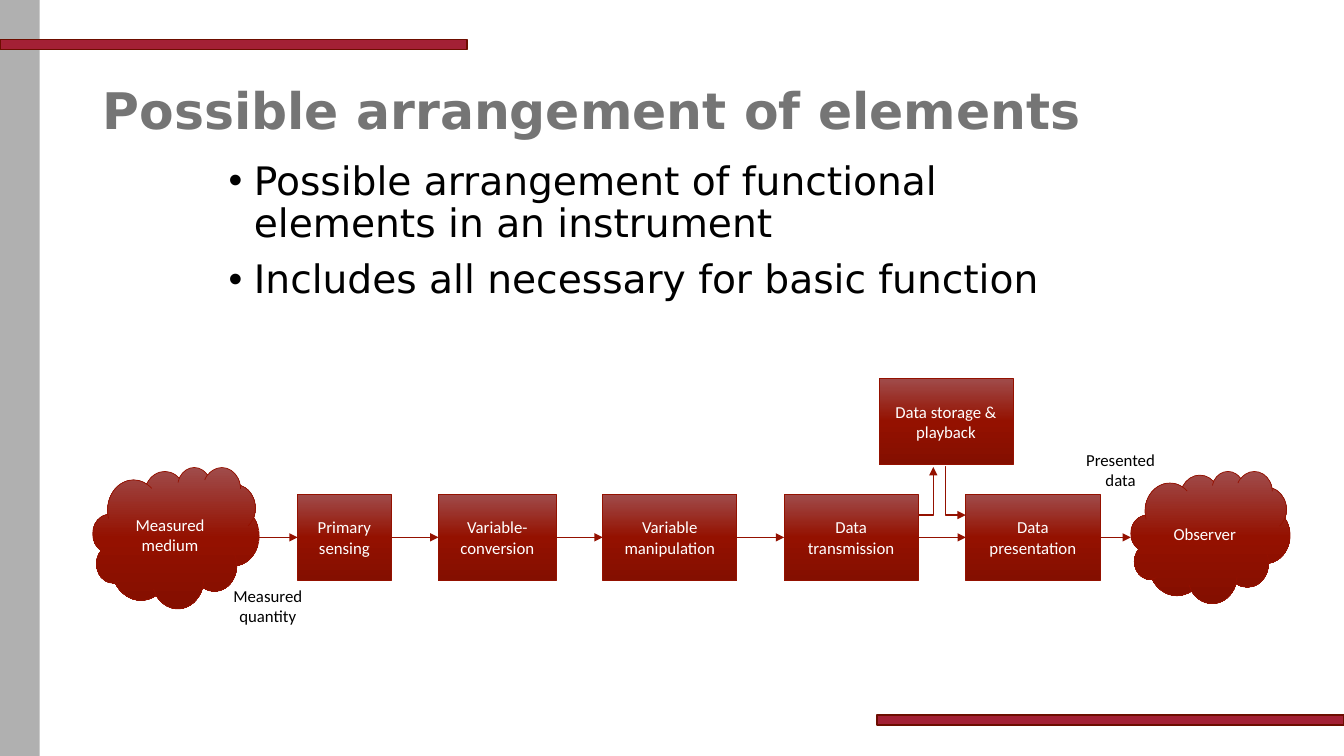
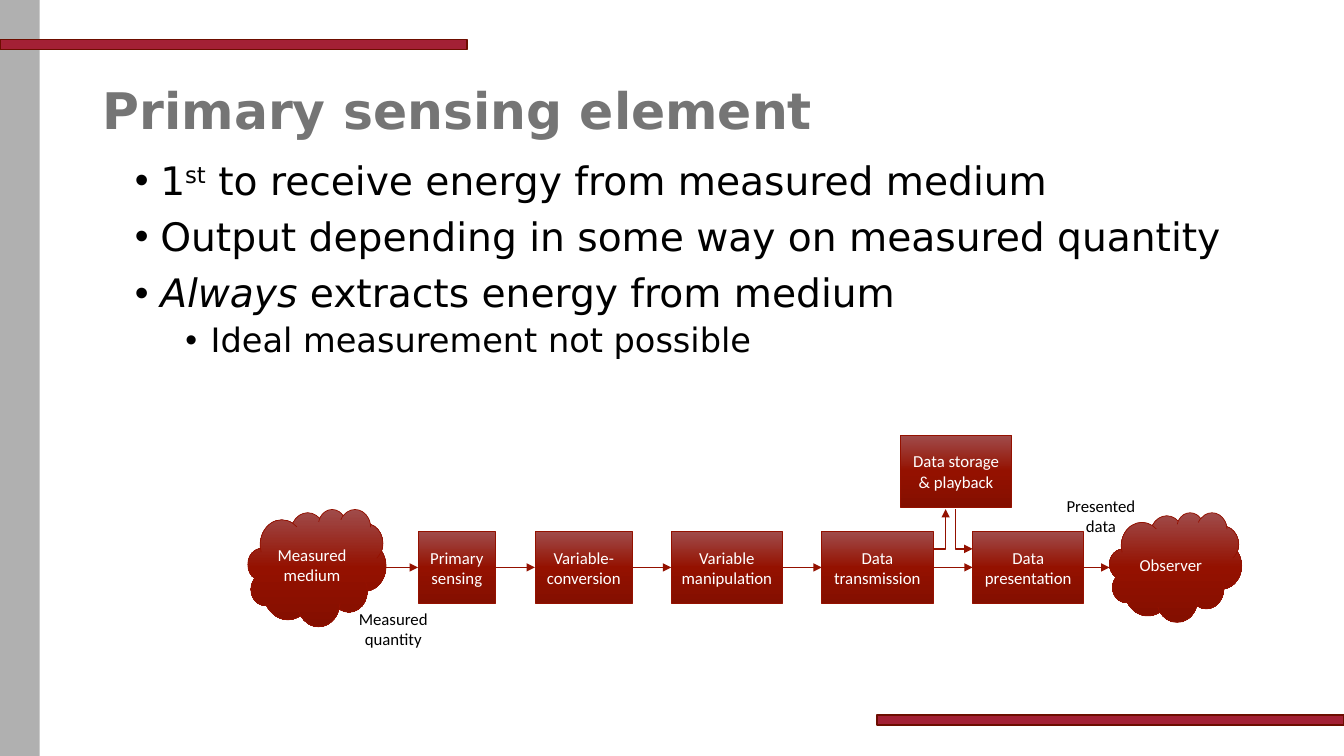
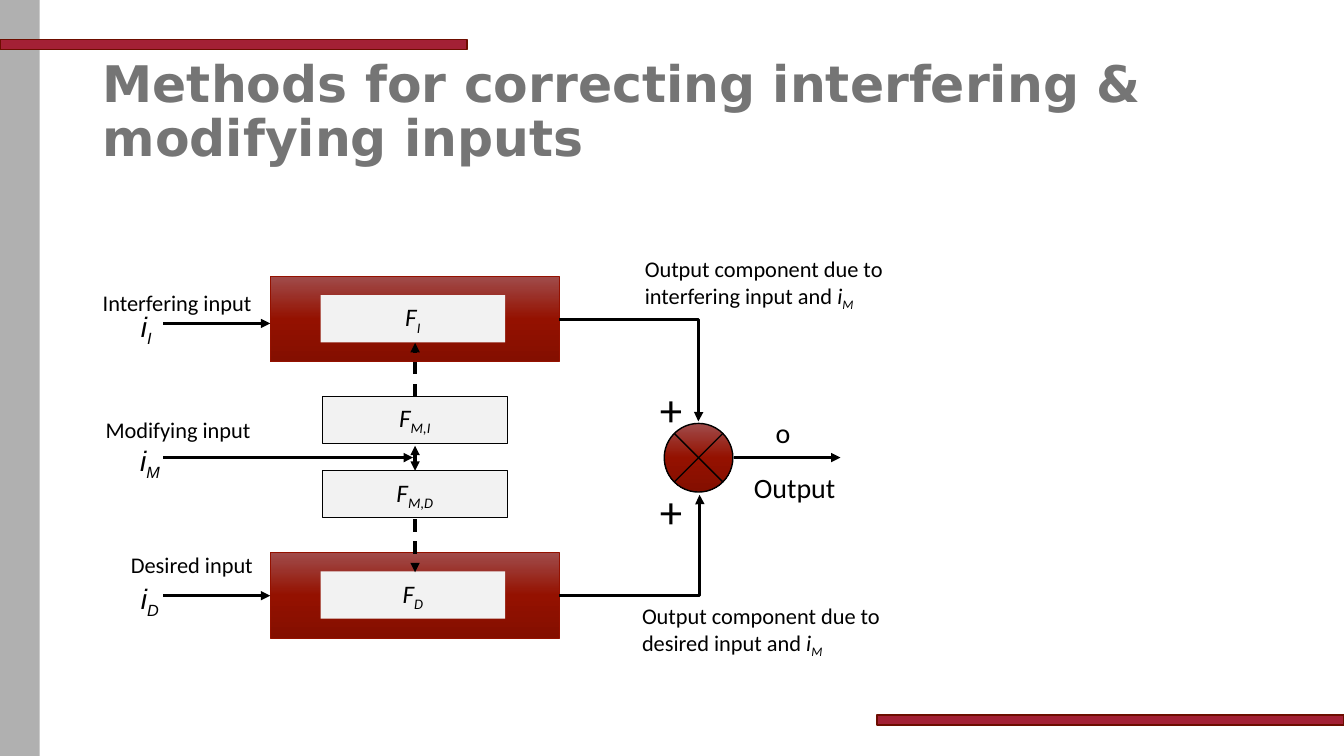
import copy
import pptx
import pptx.dml.color
import pptx.enum.dml
import pptx.enum.shapes
import pptx.enum.text
import pptx.oxml
import pptx.oxml.ns
import pptx.util

Cm = pptx.util.Cm
SHAPE = pptx.enum.shapes.MSO_SHAPE
CONNECTOR = pptx.enum.shapes.MSO_CONNECTOR
ALIGN = pptx.enum.text.PP_ALIGN
ANCHOR = pptx.enum.text.MSO_ANCHOR

WIDTH, HEIGHT = 33.87, 19.05
BLACK, WHITE, GRAY, PALE = "000000", "FFFFFF", "757575", "F2F2F2"
SIDE, BAR, BAR_EDGE, RED = "B0B0B0", "A32035", "6D0D00", "941100"
RED_GRADIENT = ((0, "A04C4B"), (0.5, RED), (1, "840F00"))
HEADING, LABEL, SYMBOL = "DejaVu Sans", "Calibri", "Arial"
BASELINES = {"sup": "30000", "sub": "-25000"}

ARRANGEMENT = {
    "title": "Possible arrangement of elements",
    "body": (5.51, 22.86),
    "bullets": [
        (0, "Possible arrangement of functional elements in an instrument"),
        (0, "Includes all necessary for basic function"),
    ],
    "flow": (2.34, 9.53, 1),
}
SENSING = {
    "title": "Primary sensing element",
    "body": (3.15, 30.12),
    "bullets": [
        (0, [("1", ""), ("st", "sup"), (" to receive energy from measured medium", "")]),
        (0, "Output depending in some way on measured quantity"),
        (0, [("Always", "italic"), (" extracts energy from medium", "")]),
        (1, "Ideal measurement not possible"),
    ],
    "flow": (6.25, 10.97, 0.83),
}
LEVELS = ((0.64, 28, 10), (1.91, 24, 5))

BOX_TOP, BOX_HEIGHT = 2.92, 2.18
CHAIN = [
    ("Measured medium", SHAPE.CLOUD, 0, 2.24, 4.19, 3.56),
    ("Primary sensing", SHAPE.RECTANGLE, 5.16, BOX_TOP, 2.36, BOX_HEIGHT),
    ("Variable-conversion", SHAPE.RECTANGLE, 8.71, BOX_TOP, 2.97, BOX_HEIGHT),
    ("Variable manipulation", SHAPE.RECTANGLE, 12.85, BOX_TOP, 3.38, BOX_HEIGHT),
    ("Data transmission", SHAPE.RECTANGLE, 17.42, BOX_TOP, 3.38, BOX_HEIGHT),
    ("Data presentation", SHAPE.RECTANGLE, 22, BOX_TOP, 3.38, BOX_HEIGHT),
    ("Observer", SHAPE.CLOUD, 26.16, 2.34, 4.01, 3.33),
]
STORAGE = ("Data storage & playback", SHAPE.RECTANGLE, 19.81, 0, 3.38, BOX_HEIGHT)
STORAGE_LINKS = [
    ((20.83, 3.45, 21.18, 2.24), "tail"),
    ((22, 3.45, 21.49, 2.24), "head"),
]
FLOW_LABELS = [
    (["Measured", "quantity"], (3.05, 5.11, 2.72, 1.55), False),
    (["Presented data"], (24.54, 1.68, 2.72, 1.55), True),
]

CORRECTING_TITLE = "Methods for correcting interfering & modifying inputs"
PATHS = [("I", 6.96), ("D", 13.92)]
MODIFIERS = [("M,I", 9.98), ("M,D", 11.86)]
MID = 10.46
SIGNALS = [
    ((MID, 9.98, MID, 8.64), "tail", True),
    ((MID, 13.08, MID, 14.42), "tail", True),
    ((MID, 11.23, MID, 11.86), "head tail", False),
    ((4.11, 11.53, 10.41, 11.53), "tail", False),
    ((4.11, 15.01, 6.81, 15.01), "tail", False),
    ((4.11, 8.15, 6.81, 8.15), "tail", False),
    ((18.49, 11.53, 21.18, 11.53), "tail", False),
]
OUTPUT_PATHS = [(14.1, 15.01, 17.63, 12.47), (14.1, 8.05, 17.6, 10.62)]
INPUT_SYMBOLS = [("I", 3.3, 7.67, 0.81), ("M", 3.28, 11.05, 1.07), ("D", 3.3, 14.53, 1.02)]
CAPTIONS = [
    ("+", 32, (16.38, 9.5, 1.09, 1.63)),
    ("+", 32, (16.38, 12.07, 1.09, 1.63)),
    ("o", 20, (19.3, 10.34, 0.89, 1.12)),
    ("Output", 20, (18.75, 11.73, 2.59, 1.12)),
    ("Desired input", 16, (3.05, 13.77, 3.63, 0.94)),
    ("Modifying input", 16, (2.41, 10.36, 4.19, 0.94)),
    ("Interfering input", 16, (2.34, 7.16, 4.29, 0.94)),
]
COMPONENTS = [("interfering", 16, 6.3), ("desired", 15.93, 15.04)]


def rgb(value):
    return pptx.dml.color.RGBColor.from_string(value)


def add_xml(parent, tag, **attributes):
    element = pptx.oxml.parse_xml(f"<a:{tag} {pptx.oxml.ns.nsdecls('a')}/>")
    for key, value in attributes.items():
        element.set(key, value)
    parent.append(element)
    return element


def write(paragraph, content, size, color=BLACK, face=LABEL, bold=None, align=None):
    runs = [(content, "")] if isinstance(content, str) else content
    all_italic = all("italic" in style for _, style in runs)
    for text, style in runs:
        run = paragraph.add_run()
        run.text = text
        if "italic" in style and not all_italic:
            run.font.italic = True
        for name, baseline in BASELINES.items():
            if name in style:
                run._r.get_or_add_rPr().set("baseline", baseline)
    paragraph.alignment = align
    font = paragraph.font
    font.name, font.size, font.bold = face, pptx.util.Pt(size), bold
    font.color.rgb = rgb(color)
    if all_italic:
        font.italic = True


def next_paragraph(frame, index):
    return frame.add_paragraph() if index else frame.paragraphs[0]


def add_shape(slide, kind, box, fill, line=None, weight=0.5):
    shape = slide.shapes.add_shape(kind, *map(Cm, box))
    shape.shadow.inherit = False
    if fill == RED_GRADIENT:
        shape.fill.gradient()
        shape.fill.gradient_angle = 270
        stops = shape._element.spPr.find(".//" + pptx.oxml.ns.qn("a:gsLst"))
        stops.append(copy.deepcopy(stops[0]))
        for stop, (position, color) in zip(shape.fill.gradient_stops, fill):
            stop.position, stop.color.rgb = position, rgb(color)
    else:
        shape.fill.solid()
        shape.fill.fore_color.rgb = rgb(fill)
    if line:
        shape.line.color.rgb = rgb(line)
        shape.line.width = pptx.util.Pt(weight)
    else:
        shape.line.fill.background()
    return shape


def add_node(slide, kind, box, content, size, fill, line, color):
    frame = add_shape(slide, kind, box, fill, line).text_frame
    frame.vertical_anchor = ANCHOR.MIDDLE
    write(frame.paragraphs[0], content, size, color, align=ALIGN.CENTER)


def add_text(slide, box, lines, size, wrap=False, **style):
    frame = slide.shapes.add_textbox(*map(Cm, box)).text_frame
    frame.word_wrap = wrap
    frame.auto_size = pptx.enum.text.MSO_AUTO_SIZE.SHAPE_TO_FIT_TEXT
    for index, content in enumerate(lines):
        write(next_paragraph(frame, index), content, size, **style)


def add_arrow(slide, points, ends, color, weight, dashed=False, bent=False):
    kind = CONNECTOR.ELBOW if bent else CONNECTOR.STRAIGHT
    arrow = slide.shapes.add_connector(kind, *map(Cm, points))
    arrow.line.color.rgb = rgb(color)
    arrow.line.width = pptx.util.Pt(weight)
    if dashed:
        arrow.line.dash_style = pptx.enum.dml.MSO_LINE.DASH
    properties = arrow._element.spPr
    for end in ends.split():
        add_xml(arrow.line._get_or_add_ln(), end + "End", type="triangle")
    if bent:
        guides = properties.find(".//" + pptx.oxml.ns.qn("a:avLst"))
        add_xml(guides, "gd", name="adj1", fmla="val 100200")
    add_xml(properties, "effectLst")


def add_slide(deck, title):
    slide = deck.slides.add_slide(deck.slide_layouts[6])
    add_shape(slide, SHAPE.RECTANGLE, (0, 0, 1, HEIGHT), SIDE)
    bar_width = 11.77
    for left, top in ((0, 1), (WIDTH - bar_width, 18.02)):
        add_shape(slide, SHAPE.RECTANGLE, (left, top, bar_width, 0.25), BAR, BAR_EDGE, 1)
    frame = slide.shapes.add_textbox(Cm(2.34), Cm(1.02), Cm(29.21), Cm(3.68)).text_frame
    frame.word_wrap = True
    frame.vertical_anchor = ANCHOR.MIDDLE
    frame.paragraphs[0].line_spacing = 0.9
    write(frame.paragraphs[0], title, 36, GRAY, HEADING, bold=True)
    return slide


def add_bullets(slide, left, width, bullets):
    frame = slide.shapes.add_textbox(Cm(left), Cm(3.94), Cm(width), Cm(12.57)).text_frame
    frame.word_wrap = True
    for index, (level, content) in enumerate(bullets):
        indent, size, gap = LEVELS[level]
        paragraph = next_paragraph(frame, index)
        paragraph.level = level
        paragraph.line_spacing = 0.9
        paragraph.space_before = pptx.util.Pt(gap if index else 0)
        properties = paragraph._p.get_or_add_pPr()
        properties.set("marL", str(Cm(indent)))
        properties.set("indent", str(-Cm(LEVELS[0][0])))
        add_xml(properties, "buFont", typeface=SYMBOL)
        add_xml(properties, "buChar", char="•")
        write(paragraph, content, size, face=HEADING)


def add_flow(slide, left, top, scale):
    def place(x, y, *size):
        return (left + x * scale, top + y * scale, *(length * scale for length in size))

    for text, kind, *box in CHAIN + [STORAGE]:
        add_node(slide, kind, place(*box), text, 12, RED_GRADIENT, RED, WHITE)
    middle = BOX_TOP + BOX_HEIGHT / 2
    for (_, _, x, _, width, _), (_, _, following, *_) in zip(CHAIN, CHAIN[1:]):
        points = place(x + width, middle) + place(following, middle)
        add_arrow(slide, points, "tail", RED, 1)
    for (x1, y1, x2, y2), ends in STORAGE_LINKS:
        add_arrow(slide, place(x1, y1) + place(x2, y2), ends, RED, 1, bent=True)
    for lines, box, wrap in FLOW_LABELS:
        add_text(slide, place(*box), lines, 12, wrap, align=ALIGN.CENTER)


def subscripted(letter, index):
    return [(letter, "italic"), (index, "italic sub")]


def add_correction(slide):
    for index, top in PATHS:
        add_shape(slide, SHAPE.RECTANGLE, (6.81, top, 7.29, 2.16), RED_GRADIENT, RED)
        add_node(slide, SHAPE.RECTANGLE, (8.08, top + 0.48, 4.65, 1.19),
                 subscripted("F", index), 18, PALE, None, BLACK)
    for index, top in MODIFIERS:
        add_node(slide, SHAPE.RECTANGLE, (8.13, top, 4.65, 1.19),
                 subscripted("F", index), 18, PALE, BLACK, BLACK)
    for points, ends, dashed in SIGNALS:
        add_arrow(slide, points, ends, BLACK, 2.25, dashed)
    add_shape(slide, SHAPE.FLOWCHART_SUMMING_JUNCTION, (16.74, 10.67, 1.73, 1.73),
              RED_GRADIENT, BLACK, 1)
    for points in OUTPUT_PATHS:
        add_arrow(slide, points, "tail", BLACK, 2.25, bent=True)
    for text, size, box in CAPTIONS:
        add_text(slide, box, [text], size)
    for index, left, top, width in INPUT_SYMBOLS:
        add_text(slide, (left, top, width, 1.12), [subscripted("i", index)], 20, face=SYMBOL)
    for source, left, top in COMPONENTS:
        ending = [(f"{source} input and ", "")] + subscripted("i", "M")
        add_text(slide, (left, top, 6.58, 1.63), ["Output component due to", ending], 16)


def main():
    deck = pptx.Presentation()
    deck.slide_width, deck.slide_height = Cm(WIDTH), Cm(HEIGHT)
    for content in (ARRANGEMENT, SENSING):
        slide = add_slide(deck, content["title"])
        add_bullets(slide, *content["body"], content["bullets"])
        add_flow(slide, *content["flow"])
    add_correction(add_slide(deck, CORRECTING_TITLE))
    deck.save("out.pptx")


if __name__ == "__main__":
    main()
